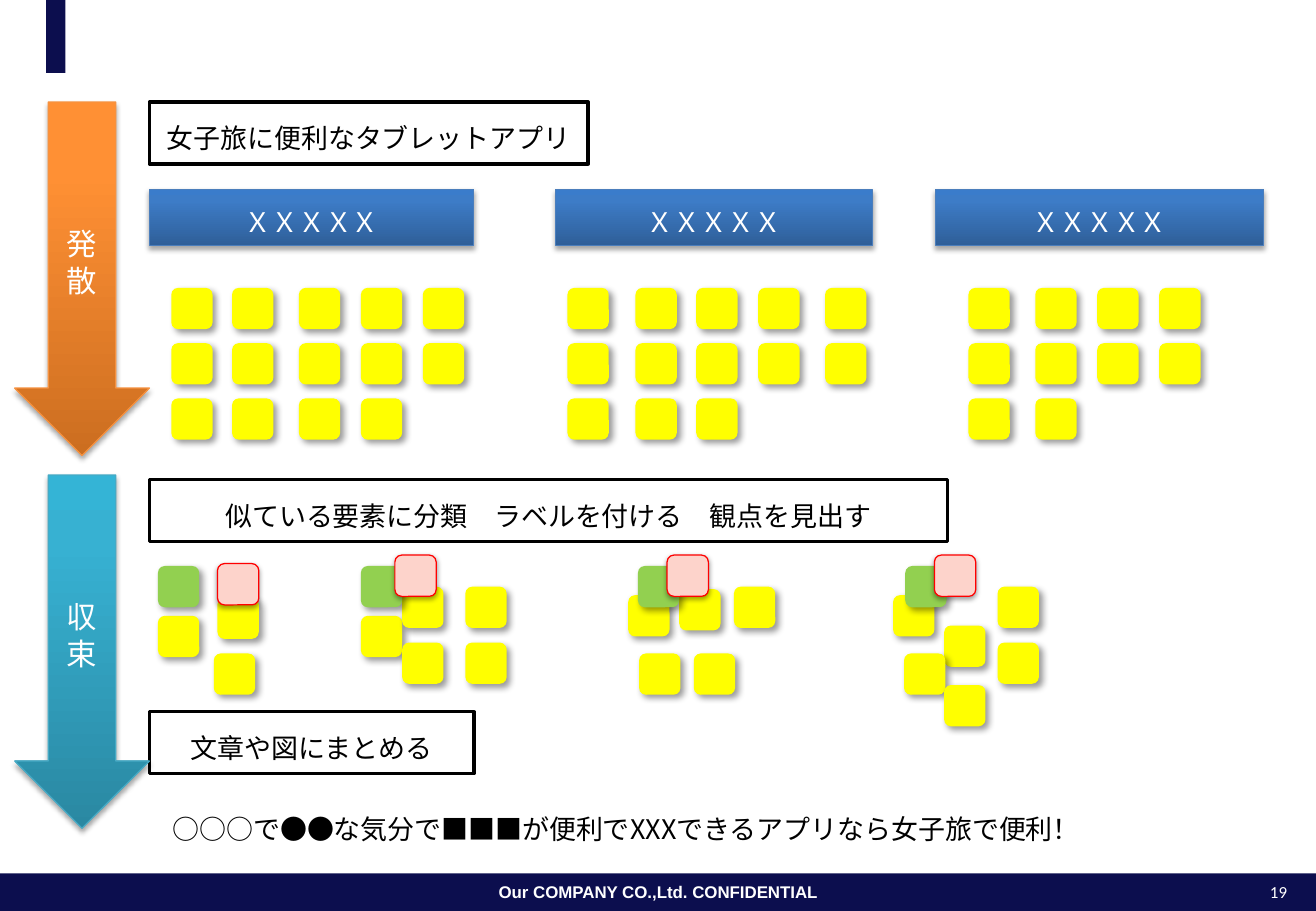
from lxml.etree import SubElement
from pptx import Presentation
from pptx.dml.color import RGBColor
from pptx.enum.shapes import MSO_SHAPE
from pptx.enum.text import MSO_ANCHOR, PP_ALIGN
from pptx.oxml.ns import qn
from pptx.util import Inches, Pt

CELL = Inches(0.1)
COLUMNS, ROWS = 108.3, 75
NOTE_SIDE = 3.4
NOTE_ROW_STEP = 4.55
JAPANESE = "Noto Sans CJK JP"
NAVY, WHITE, BLACK = "0C0E4E", "FFFFFF", "000000"
YELLOW, GREEN, PINK, RED = "FFFF00", "92D050", "FDD3CB", "FF0000"
ORANGE_FADE = ("CC6E20", "FF9034", "FF9136")
TEAL_FADE = ("2A88A2", "37B1D2", "34B4D6")
BLUE_FADE = ("2F5F99", "3D7CC7", "3A7CCB")
NOTE_SHADOW = (40, 4, 3, 45)
LABEL_SHADOW = (38, 3.1, 1.6, 90)
PANEL_SHADOW = (35, 3.1, 1.8, 90)
PADDING = {"margin_left": Inches(0.12), "margin_right": Inches(0.12),
           "margin_top": Inches(0.08), "margin_bottom": Inches(0.08)}

TOPICS = [
    ((12.3, 15.6, 26.7, 4.6), 1.8, (0, 5, 10.5, 15.6, 20.7), (5, 5, 4)),
    ((45.7, 15.6, 26.1, 4.6), 1, (0, 5.6, 10.6, 15.7, 21.2), (5, 5, 3)),
    ((77, 15.6, 27, 4.6), 2.7, (0, 5.5, 10.6, 15.7), (4, 4, 2)),
]
CLUSTERS = [
    ((13, 45.7), (0, 0.9), (4.9, 0.7), [(4.6, 8.1), (0, 5), (4.9, 3.5)]),
    ((29.7, 45.7), (0, 0.9), (2.8, 0),
     [(0, 5), (3.4, 2.6), (8.6, 2.6), (3.4, 7.2), (8.6, 7.2)]),
    ((51.7, 45.7), (0.8, 0.9), (3.2, 0),
     [(0, 3.3), (4.2, 2.8), (8.7, 2.6), (0.9, 8.1), (5.4, 8.1)]),
    ((73.5, 45.7), (1, 0.9), (3.4, 0),
     [(0, 3.3), (4.2, 5.8), (8.6, 2.6), (0.9, 8.1), (8.6, 7.2), (4.2, 10.7)]),
]


def color(code):
    return RGBColor.from_string(code)


def cells(box):
    return [int(CELL * length) for length in box]


def apply_formats(target, formats):
    for name, value in formats.items():
        setattr(target, name, value)


def paint(shape, fill):
    if isinstance(fill, str):
        shape.fill.solid()
        shape.fill.fore_color.rgb = color(fill)
        return
    shape.fill.gradient()
    shape.fill.gradient_angle = 90
    stops = next(shape.element.iter(qn("a:gsLst")))
    for stop in list(stops):
        stops.remove(stop)
    for share, code in zip((0, 80, 100), fill):
        stop = SubElement(stops, qn("a:gs"), pos=str(share * 1000))
        SubElement(stop, qn("a:srgbClr"), val=code)


def cast_shadow(shape, opacity, blur, distance, angle):
    effects = next(shape.element.iter(qn("a:effectLst")))
    shadow = SubElement(effects, qn("a:outerShdw"), blurRad=str(Pt(blur)),
                        dist=str(Pt(distance)), dir=str(angle * 60000),
                        algn="ctr", rotWithShape="0")
    tint = SubElement(shadow, qn("a:srgbClr"), val=BLACK)
    SubElement(tint, qn("a:alpha"), val=str(opacity * 1000))


def add_panel(slide, preset, box, fill, outline=None, shadow=None):
    panel = slide.shapes.add_shape(preset, *cells(box))
    paint(panel, fill)
    if outline:
        panel.line.color.rgb = color(outline[0])
        panel.line.width = Pt(outline[1])
    else:
        panel.line.fill.background()
    panel.shadow.inherit = False
    if shadow:
        cast_shadow(panel, *shadow)
    return panel


def write(holder, wording, ink, frame=None, paragraph=None, font=None):
    text_frame = holder.text_frame
    apply_formats(text_frame, {"word_wrap": True,
                               "vertical_anchor": MSO_ANCHOR.MIDDLE, **(frame or {})})
    line = text_frame.paragraphs[0]
    apply_formats(line, {"alignment": PP_ALIGN.CENTER, **(paragraph or {})})
    run = line.add_run()
    run.text = wording
    apply_formats(run.font, {"name": JAPANESE, "size": Pt(16), **(font or {})})
    run.font.color.rgb = color(ink)
    SubElement(run.font._element, qn("a:ea"), typeface=run.font.name)


def draw_frame(slide):
    footer = add_panel(slide, MSO_SHAPE.RECTANGLE, (0, 71.9, COLUMNS, ROWS - 71.9), NAVY)
    write(footer, "Our COMPANY CO.,Ltd. CONFIDENTIAL", WHITE, {"word_wrap": False},
          font={"name": "Arial", "size": Pt(10), "bold": True})
    add_panel(slide, MSO_SHAPE.RECTANGLE, (3.8, 0, 1.6, 6), NAVY)
    page_number = slide.shapes.add_textbox(*cells((102.8, 72.1, 4.1, 2.7)))
    write(page_number, "19", WHITE, {"word_wrap": False},
          {"alignment": PP_ALIGN.RIGHT}, {"name": "Calibri", "size": Pt(10)})


def draw_phase(slide, box, wording, fade, edge):
    arrow = add_panel(slide, MSO_SHAPE.DOWN_ARROW, box, fade, (edge, 0.75), PANEL_SHADOW)
    write(arrow, wording, WHITE, font={"size": Pt(18)})


def draw_step(slide, box, wording):
    step = add_panel(slide, MSO_SHAPE.RECTANGLE, box, WHITE, (BLACK, 2))
    write(step, wording, BLACK, PADDING, {"line_spacing": 1.3})


def draw_note(slide, left, top, fill=YELLOW, outline=None, shadow=NOTE_SHADOW):
    add_panel(slide, MSO_SHAPE.ROUNDED_RECTANGLE,
              (left, top, NOTE_SIDE, NOTE_SIDE), fill, outline, shadow)


def draw_topic(slide, box, indent, note_columns, row_counts):
    left, top = box[:2]
    heading = add_panel(slide, MSO_SHAPE.RECTANGLE, box, BLUE_FADE,
                        ("4B7EBC", 0.75), PANEL_SHADOW)
    write(heading, "ＸＸＸＸＸ", WHITE, PADDING, {"line_spacing": 1.3})
    for row, count in enumerate(row_counts):
        for offset in note_columns[:count]:
            draw_note(slide, left + indent + offset, top + 8.1 + row * NOTE_ROW_STEP)


def draw_cluster(slide, origin, green, pink, yellows):
    left, top = origin
    for x, y in yellows:
        draw_note(slide, left + x, top + y)
    draw_note(slide, left + green[0], top + green[1], GREEN)
    draw_note(slide, left + pink[0], top + pink[1], PINK, (RED, 0.75), LABEL_SHADOW)


def draw_conclusion(slide, box, wording):
    conclusion = slide.shapes.add_textbox(*cells(box))
    write(conclusion, wording, BLACK, {**PADDING, "vertical_anchor": MSO_ANCHOR.TOP},
          {"alignment": PP_ALIGN.LEFT, "line_spacing": 1.3})


def main():
    deck = Presentation()
    deck.slide_width, deck.slide_height = cells((COLUMNS, ROWS))
    slide = deck.slides.add_slide(deck.slide_layouts[6])
    draw_frame(slide)
    draw_step(slide, (12.3, 39.5, 65.7, 5.1), "似ている要素に分類　ラベルを付ける　観点を見出す")
    for cluster in CLUSTERS:
        draw_cluster(slide, *cluster)
    draw_step(slide, (12.3, 58.6, 26.7, 5.1), "文章や図にまとめる")
    draw_conclusion(slide, (13, 65.3, 91, 5.1),
                    "○○○で●●な気分で■■■が便利でXXXできるアプリなら女子旅で便利！")
    draw_phase(slide, (1.2, 39.1, 11.1, 29.1), "収束", TEAL_FADE, "46AAC5")
    draw_phase(slide, (1.2, 8.4, 11.1, 29.1), "発散", ORANGE_FADE, "F69240")
    for topic in TOPICS:
        draw_topic(slide, *topic)
    draw_step(slide, (12.3, 8.4, 36.1, 5.1), "女子旅に便利なタブレットアプリ")
    deck.save("out.pptx")


if __name__ == "__main__":
    main()
